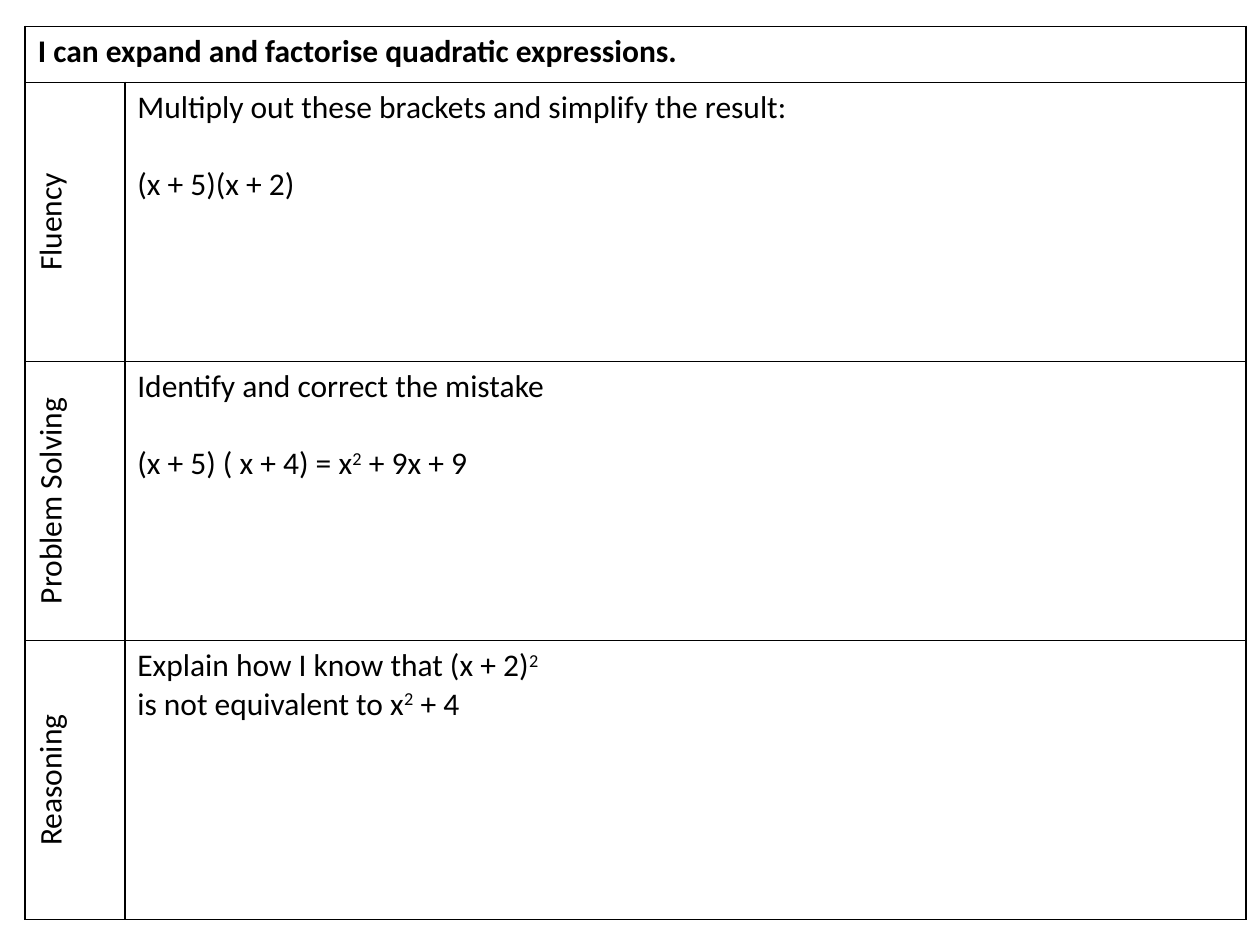
from dataclasses import dataclass

from lxml import etree
from pptx import Presentation
from pptx.dml.color import RGBColor
from pptx.enum import text
from pptx.oxml import ns
from pptx.util import Pt

BLACK, WHITE = "000000", "FFFFFF"
LEFT, TOP = 14.4, 15.1
COLUMNS = (56.9, 640.8)
TITLE_HEIGHT, TASK_HEIGHT = 32, 159.5
LINE_GAP = 22


@dataclass
class Task:
    skill: str
    lines: tuple[str, ...]
    gap: float = 0


TITLE = "I can expand and factorise quadratic expressions."
TASKS = (
    Task("Fluency", ("Multiply out these brackets and simplify the result:",
                     "(x + 5)(x + 2)"), LINE_GAP),
    Task("Problem Solving", ("Identify and correct the mistake",
                             "(x + 5) ( x + 4) = x^2^ + 9x + 9"), LINE_GAP),
    Task("Reasoning", ("Explain how I know that (x + 2)^2^",
                       "is not equivalent to x^2^ + 4")),
)


def rgb(colour: str) -> RGBColor:
    return RGBColor.from_string(colour)


def write(cell, *lines: str, bold: bool = False, align=text.PP_ALIGN.LEFT,
          gap: float = 0, size: float = 18, colour: str = BLACK) -> None:
    """Write one paragraph per line; text between carets is superscript."""
    tf = cell.text_frame
    for i, line in enumerate(lines):
        p = tf.add_paragraph() if i else tf.paragraphs[0]
        p.alignment = align
        p.space_before = Pt(gap if i else 0)
        for j, part in enumerate(line.split("^")):
            if not part:
                continue
            r = p.add_run()
            r.text = part
            r.font.name, r.font.size, r.font.bold = "Calibri", Pt(size), bold
            r.font.color.rgb = rgb(colour)
            if j % 2:
                r.font._element.set("baseline", "30000")


def style_cell(cell, border: str = BLACK, fill: str = WHITE) -> None:
    tc_pr = cell._tc.get_or_add_tcPr()
    for side in ("lnL", "lnR", "lnT", "lnB"):
        ln = etree.SubElement(tc_pr, ns.qn(f"a:{side}"), w=str(Pt(1)))
        solid = etree.SubElement(ln, ns.qn("a:solidFill"))
        etree.SubElement(solid, ns.qn("a:srgbClr"), val=border)
    cell.fill.solid()
    cell.fill.fore_color.rgb = rgb(fill)


def main() -> None:
    prs = Presentation()
    prs.slide_width, prs.slide_height = Pt(720), Pt(540)
    s = prs.slides.add_slide(prs.slide_layouts[6])
    heights = [TITLE_HEIGHT] + [TASK_HEIGHT] * len(TASKS)
    table = s.shapes.add_table(len(heights), len(COLUMNS), Pt(LEFT), Pt(TOP),
                               Pt(sum(COLUMNS)), Pt(sum(heights))).table
    for column, width in zip(table.columns, COLUMNS):
        column.width = Pt(width)
    for row, height in zip(table.rows, heights):
        row.height = Pt(height)
        for cell in row.cells:
            style_cell(cell)

    table.cell(0, 0).merge(table.cell(0, 1))
    write(table.cell(0, 0), TITLE, bold=True)
    for i, task in enumerate(TASKS, start=1):
        label = table.cell(i, 0)
        label._tc.tcPr.set("vert", "vert270")
        write(label, task.skill, align=text.PP_ALIGN.CENTER)
        write(table.cell(i, 1), *task.lines, gap=task.gap)
    prs.save("out.pptx")


if __name__ == "__main__":
    main()
